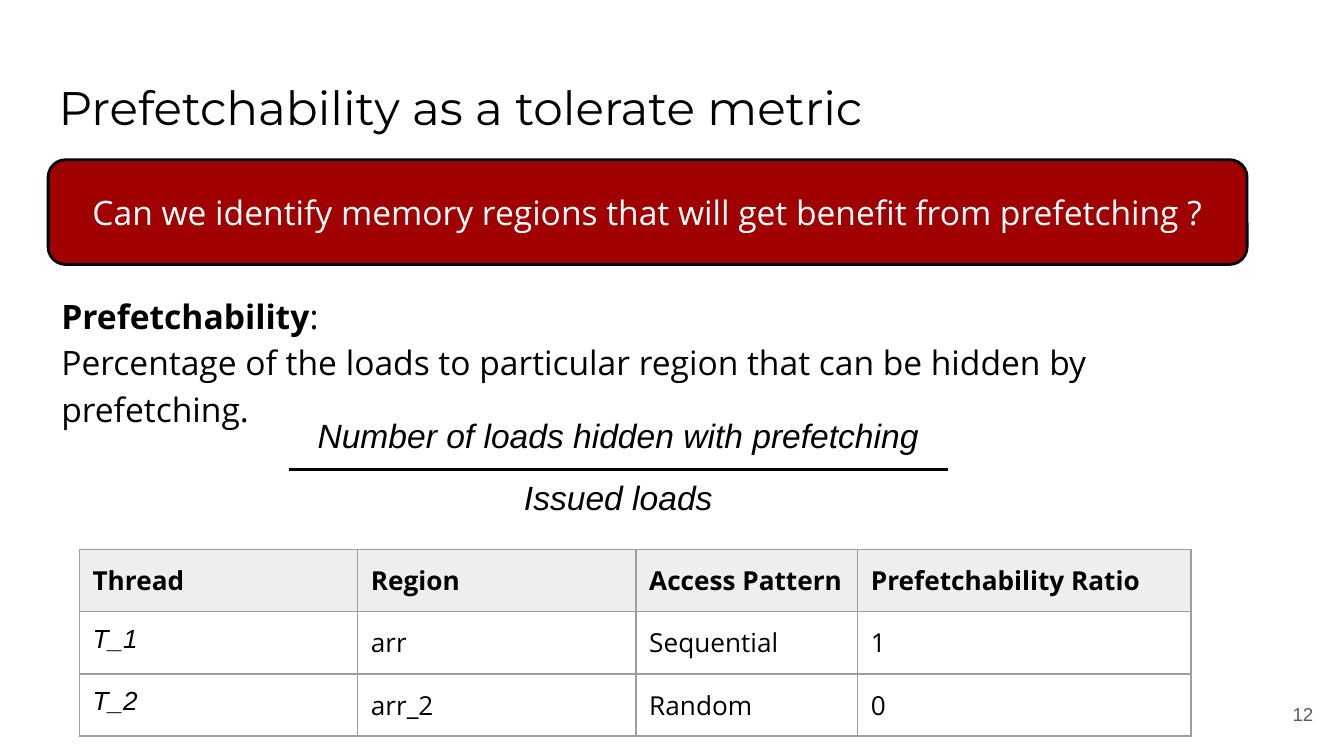
import pptx
import pptx.dml.color
import pptx.enum.shapes
import pptx.enum.text
import pptx.oxml
import pptx.oxml.ns
import pptx.util
from pptx.dml.color import RGBColor
from pptx.enum.text import MSO_ANCHOR, PP_ALIGN
from pptx.util import Cm

BLACK = RGBColor(0x00, 0x00, 0x00)
WHITE = RGBColor(0xFF, 0xFF, 0xFF)
RED = RGBColor(0xA0, 0x00, 0x00)
HEADER_GRAY = RGBColor(0xEE, 0xEE, 0xEE)
BORDER_GRAY = RGBColor(0x9E, 0x9E, 0x9E)
NUMBER_GRAY = RGBColor(0x59, 0x59, 0x59)

TITLE_FONT = "Montserrat"
BODY_FONT = "Open Sans"
FORMULA_FONT = "Arial"
INSET = Cm(0.25)

COLUMN_WIDTHS = [5.26, 5.26, 4.19, 6.3]
ROW_HEIGHT = 1.1
TABLE_ROWS = [
    ["Thread", "Region", "Access Pattern", "Prefetchability Ratio"],
    ["T_1", "arr", "Sequential", "1"],
    ["T_2", "arr_2", "Random", "0"],
]


def set_font(font, name, size, color=BLACK, bold=False, italic=False):
    font.name = name
    font.size = pptx.util.Pt(size)
    font.color.rgb = color
    font.bold = bold
    font.italic = italic


def prepare_frame(frame, anchor=MSO_ANCHOR.TOP):
    frame.word_wrap = True
    frame.auto_size = pptx.enum.text.MSO_AUTO_SIZE.NONE
    frame.vertical_anchor = anchor
    frame.margin_left = frame.margin_right = INSET
    frame.margin_top = frame.margin_bottom = INSET


def add_text(slide, left, top, width, height, text, alignment, anchor=MSO_ANCHOR.TOP):
    shape = slide.shapes.add_textbox(Cm(left), Cm(top), Cm(width), Cm(height))
    prepare_frame(shape.text_frame, anchor)
    paragraph = shape.text_frame.paragraphs[0]
    paragraph.text = text
    paragraph.alignment = alignment
    return paragraph


def add_title(slide, left, top, width, height):
    shape = slide.shapes.title
    shape.left, shape.top = Cm(left), Cm(top)
    shape.width, shape.height = Cm(width), Cm(height)
    prepare_frame(shape.text_frame)
    paragraph = shape.text_frame.paragraphs[0]
    paragraph.text = "Prefetchability as a tolerate metric"
    paragraph.alignment = PP_ALIGN.LEFT
    set_font(paragraph.font, TITLE_FONT, 25.2)


def add_question(slide, left, top, width, height):
    shape = slide.shapes.add_shape(
        pptx.enum.shapes.MSO_SHAPE.ROUNDED_RECTANGLE,
        Cm(left), Cm(top), Cm(width), Cm(height),
    )
    shape.shadow.inherit = False
    shape.fill.solid()
    shape.fill.fore_color.rgb = RED
    shape.line.color.rgb = BLACK
    shape.line.width = pptx.util.Pt(1.5)
    prepare_frame(shape.text_frame, MSO_ANCHOR.MIDDLE)
    paragraph = shape.text_frame.paragraphs[0]
    paragraph.text = "Can we identify memory regions that will get benefit from prefetching ?"
    paragraph.alignment = PP_ALIGN.CENTER
    set_font(paragraph.font, BODY_FONT, 18, WHITE)


def add_definition(slide, left, top, width, height):
    shape = slide.shapes.add_textbox(Cm(left), Cm(top), Cm(width), Cm(height))
    frame = shape.text_frame
    prepare_frame(frame)
    term = frame.paragraphs[0]
    for text, bold in (("Prefetchability", True), (":", False)):
        run = term.add_run()
        run.text = text
        set_font(run.font, BODY_FONT, 18, bold=bold)
    meaning = frame.add_paragraph()
    meaning.text = "Percentage of the loads to particular region that can be hidden by prefetching."
    set_font(meaning.font, BODY_FONT, 18)
    for paragraph in frame.paragraphs:
        paragraph.line_spacing = 1.15


def add_fraction(slide, left, top, width, height):
    part_height = 1.27
    parts = (
        ("Number of loads hidden with prefetching", top),
        ("Issued loads", top + height - part_height),
    )
    for text, part_top in parts:
        paragraph = add_text(
            slide, left, part_top, width, part_height, text, PP_ALIGN.CENTER
        )
        set_font(paragraph.font, FORMULA_FONT, 18, italic=True)
    bar_top = Cm(top + part_height)
    bar = slide.shapes.add_connector(
        pptx.enum.shapes.MSO_CONNECTOR.STRAIGHT,
        Cm(left), bar_top, Cm(left + width), bar_top,
    )
    bar.line.color.rgb = BLACK
    bar.line.width = pptx.util.Pt(1.5)
    pptx.oxml.ns.qn("a:effectLst")
    bar.element.spPr.append(
        pptx.oxml.parse_xml(f'<a:effectLst {pptx.oxml.ns.nsdecls("a")}/>')
    )


def add_borders(cell):
    properties = cell._tc.get_or_add_tcPr()
    for position, side in enumerate(("lnL", "lnR", "lnT", "lnB")):
        border = pptx.oxml.parse_xml(
            f'<a:{side} {pptx.oxml.ns.nsdecls("a")} w="{pptx.util.Pt(0.75)}">'
            f'<a:solidFill><a:srgbClr val="{BORDER_GRAY}"/></a:solidFill></a:{side}>'
        )
        properties.insert(position, border)


def add_ratio_table(slide, left, top):
    table = slide.shapes.add_table(
        len(TABLE_ROWS), len(COLUMN_WIDTHS), Cm(left), Cm(top),
        Cm(sum(COLUMN_WIDTHS)), Cm(ROW_HEIGHT * len(TABLE_ROWS)),
    ).table
    table.horz_banding = False
    for column, width in zip(table.columns, COLUMN_WIDTHS):
        column.width = Cm(width)
    for row_index, texts in enumerate(TABLE_ROWS):
        table.rows[row_index].height = Cm(ROW_HEIGHT)
        is_header = row_index == 0
        for column_index, text in enumerate(texts):
            cell = table.cell(row_index, column_index)
            cell.margin_left = cell.margin_right = INSET
            cell.margin_top = cell.margin_bottom = INSET
            cell.fill.solid()
            cell.fill.fore_color.rgb = HEADER_GRAY if is_header else WHITE
            add_borders(cell)
            is_thread = column_index == 0 and not is_header
            paragraph = cell.text_frame.paragraphs[0]
            paragraph.text = text
            set_font(
                paragraph.font, FORMULA_FONT if is_thread else BODY_FONT, 14,
                bold=is_header, italic=is_thread,
            )


def add_slide_number(slide, left, top, width, height):
    paragraph = add_text(
        slide, left, top, width, height, "12", PP_ALIGN.RIGHT, MSO_ANCHOR.MIDDLE
    )
    set_font(paragraph.font, FORMULA_FONT, 10, NUMBER_GRAY)


def main():
    presentation = pptx.Presentation()
    presentation.slide_width = Cm(25.4)
    presentation.slide_height = Cm(14.29)
    slide = presentation.slides.add_slide(presentation.slide_layouts[5])
    add_title(slide, 0.86, 1.24, 23.67, 1.6)
    add_slide_number(slide, 23.55, 12.95, 1.52, 1.09)
    add_definition(slide, 0.91, 5.23, 22.45, 2.67)
    add_fraction(slide, 5.46, 7.6, 12.45, 2.44)
    add_question(slide, 0.91, 3.02, 22.66, 1.98)
    add_ratio_table(slide, 1.5, 10.39)
    presentation.save("out.pptx")


if __name__ == "__main__":
    main()
